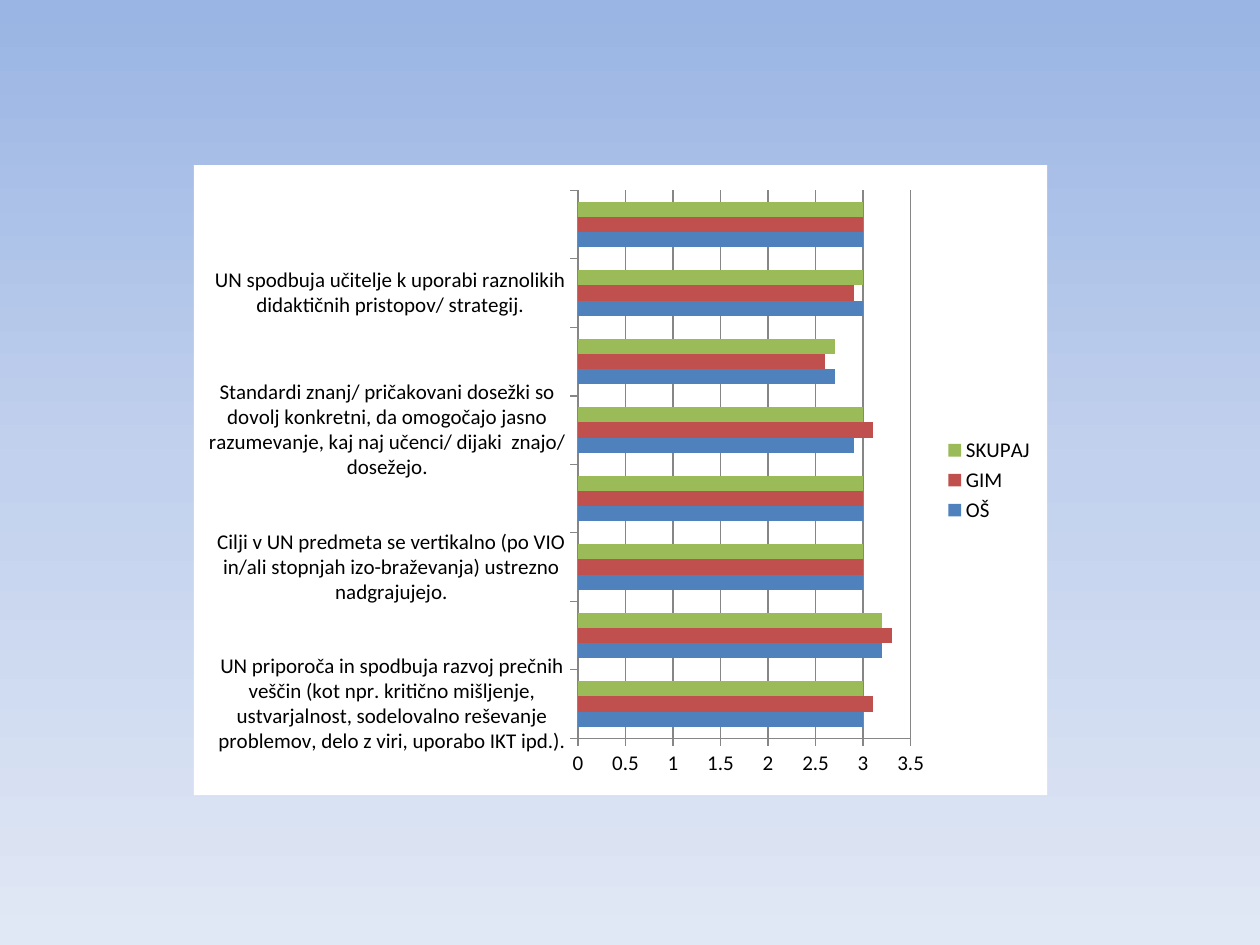
from copy import deepcopy

from lxml.etree import SubElement
from pptx import Presentation
from pptx.chart.data import CategoryChartData
from pptx.dml.color import RGBColor
from pptx.enum.chart import XL_CHART_TYPE, XL_LEGEND_POSITION, XL_TICK_MARK
from pptx.oxml import parse_xml
from pptx.oxml.ns import nsdecls, qn
from pptx.util import Cm, Pt

BLACK = RGBColor(0x00, 0x00, 0x00)
GRAY = RGBColor(0x86, 0x86, 0x86)
BLUE = RGBColor(0x4F, 0x81, 0xBD)
RED = RGBColor(0xC0, 0x50, 0x4D)
GREEN = RGBColor(0x9B, 0xBB, 0x59)

BACKGROUND_STOPS = [
    (0, RGBColor(0x9A, 0xB5, 0xE4)),
    (0.5, RGBColor(0xC2, 0xD1, 0xED)),
    (1, RGBColor(0xE1, 0xE8, 0xF5)),
]

CATEGORIES = [
    "UN priporoča in spodbuja razvoj prečnih veščin (kot npr. kritično mišljenje, "
    "ustvarjalnost, sodelovalno reševanje problemov, delo z viri, uporabo IKT ipd.).",
    "",
    "Cilji v UN predmeta se vertikalno (po VIO in/ali stopnjah izo-braževanja) "
    "ustrezno nadgrajujejo.",
    "",
    "Standardi znanj/ pričakovani dosežki so dovolj konkretni, da omogočajo jasno "
    "razumevanje, kaj naj učenci/ dijaki  znajo/ dosežejo.",
    "",
    "UN spodbuja učitelje k uporabi raznolikih didaktičnih pristopov/ strategij.",
    "",
]
SERIES = [
    ("OŠ", BLUE, [3, 3.2, 3, 3, 2.9, 2.7, 3, 3]),
    ("GIM", RED, [3.1, 3.3, 3, 3, 3.1, 2.6, 2.9, 3]),
    ("SKUPAJ", GREEN, [3, 3.2, 3, 3, 3, 2.7, 3, 3]),
]
PLOT_LAYOUT = [
    ("layoutTarget", "inner"), ("xMode", "edge"), ("yMode", "edge"),
    ("x", 0.45), ("y", 0.04), ("w", 0.39), ("h", 0.87),
]


def fill_background(slide):
    fill = slide.background.fill
    fill.gradient()
    fill.gradient_angle = 270
    stop_list = slide.element.find(".//" + qn("a:gsLst"))
    stop_list.insert(1, deepcopy(stop_list[0]))
    for stop, (position, color) in zip(fill.gradient_stops, BACKGROUND_STOPS):
        stop.position = position
        stop.color.rgb = color


def place_plot(chart):
    plot_area = chart.element.find(".//" + qn("c:plotArea"))
    for layout in plot_area.findall(qn("c:layout")):
        plot_area.remove(layout)
    layout = parse_xml(f"<c:layout {nsdecls('c')}/>")
    manual = SubElement(layout, qn("c:manualLayout"))
    for name, value in PLOT_LAYOUT:
        SubElement(manual, qn(f"c:{name}")).set("val", str(value))
    plot_area.insert(0, layout)


def paint_chart_white(chart):
    properties = parse_xml(
        f'<c:spPr {nsdecls("c", "a")}><a:solidFill><a:srgbClr val="FFFFFF"/>'
        "</a:solidFill><a:ln><a:noFill/></a:ln></c:spPr>"
    )
    chart.element.find(qn("c:chart")).addnext(properties)


def format_axis(axis):
    axis.major_tick_mark = XL_TICK_MARK.OUTSIDE
    axis.minor_tick_mark = XL_TICK_MARK.NONE
    axis.format.line.color.rgb = GRAY
    axis.format.line.width = Pt(0.75)


def add_survey_chart(slide):
    data = CategoryChartData()
    data.categories = CATEGORIES
    for name, _, values in SERIES:
        data.add_series(name, values)
    chart = slide.shapes.add_chart(
        XL_CHART_TYPE.BAR_CLUSTERED, Cm(3.91), Cm(3.33), Cm(17.2), Cm(12.7), data
    ).chart
    chart.has_title = False
    chart.font.name = "Calibri"
    chart.font.size = Pt(12)
    chart.font.color.rgb = BLACK

    plot = chart.plots[0]
    plot.gap_width = 150
    plot.overlap = 0
    plot.vary_by_categories = False
    for series, (_, color, _) in zip(plot.series, SERIES):
        series.format.fill.solid()
        series.format.fill.fore_color.rgb = color

    for axis in (chart.category_axis, chart.value_axis):
        format_axis(axis)
    value_axis = chart.value_axis
    value_axis.minimum_scale = 0
    value_axis.maximum_scale = 3.5
    value_axis.major_unit = 0.5
    value_axis.major_gridlines.format.line.color.rgb = GRAY
    value_axis.major_gridlines.format.line.width = Pt(0.75)

    chart.has_legend = True
    chart.legend.position = XL_LEGEND_POSITION.RIGHT
    chart.legend.include_in_layout = False
    place_plot(chart)
    paint_chart_white(chart)


def main():
    presentation = Presentation()
    presentation.slide_width = Cm(25.4)
    presentation.slide_height = Cm(19.05)
    slide = presentation.slides.add_slide(presentation.slide_layouts[6])
    fill_background(slide)
    add_survey_chart(slide)
    presentation.save("out.pptx")


if __name__ == "__main__":
    main()
